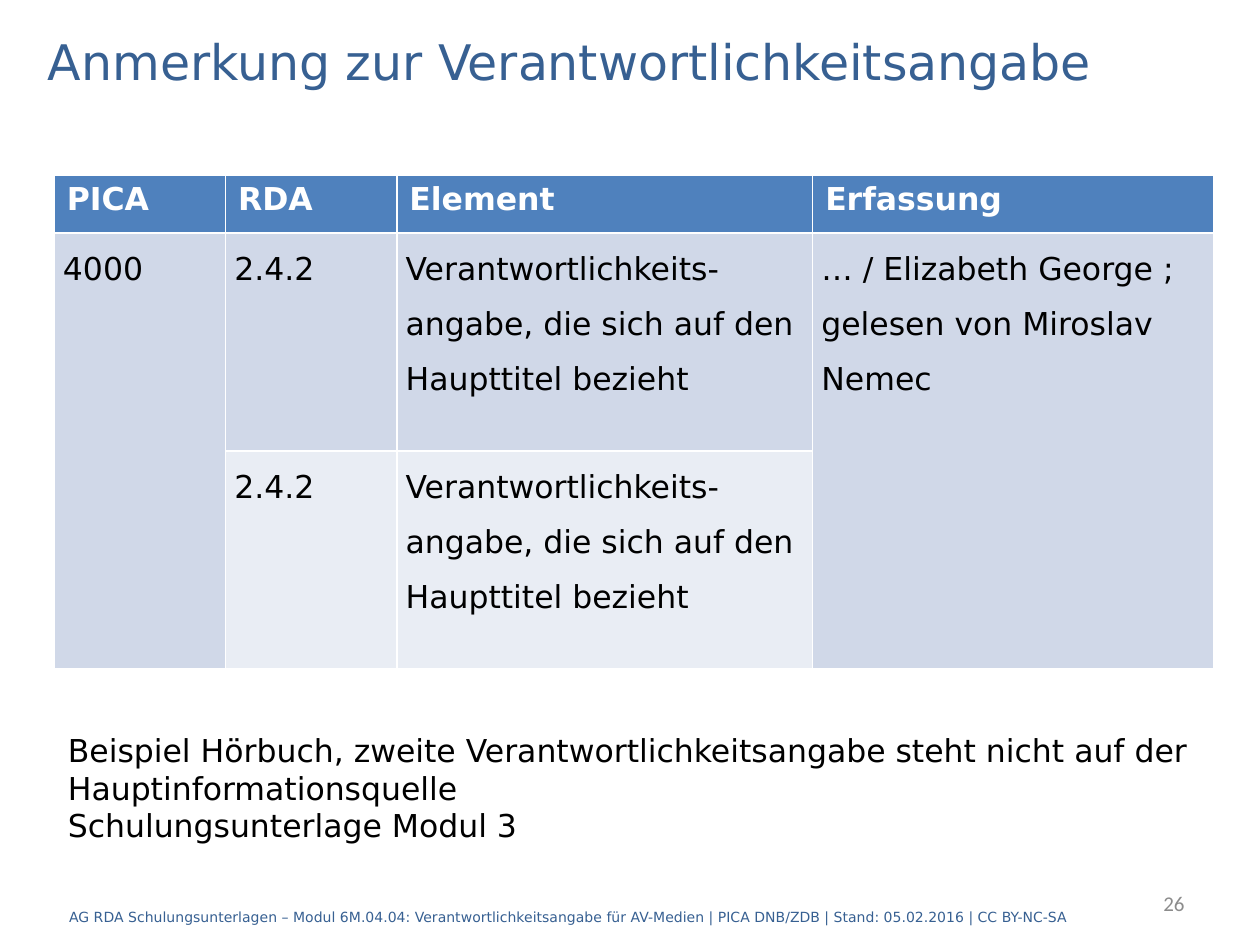
from dataclasses import dataclass

from pptx import Presentation
from pptx.dml.color import RGBColor as Color
from pptx.enum.text import MSO_ANCHOR as Anchor, PP_ALIGN as Align
from pptx.util import Inches, Pt


@dataclass(frozen=True)
class Theme:
    font: str = "DejaVu Sans"
    number_font: str = "Calibri"
    heading: str = "376092"
    text: str = "000000"
    muted: str = "8C8C8C"
    header_text: str = "FFFFFF"
    header_fill: str = "4F81BD"
    band_fills: tuple = ("D0D8E8", "E9EDF4")
    title_size: int = 28
    body_size: int = 18
    number_size: int = 12
    footer_size: int = 8


class SlideBuilder:
    COLUMNS, ROWS = 100, 75

    def __init__(self, presentation, theme):
        self.theme = theme
        self.column = presentation.slide_width / self.COLUMNS
        self.row = presentation.slide_height / self.ROWS
        self.slide = presentation.slides.add_slide(presentation.slide_layouts[5])

    def area(self, left, top, width, height):
        return (round(left * self.column), round(top * self.row),
                round(width * self.column), round(height * self.row))

    def fill_text(self, text_frame, text, size, color, font=None,
                  bold=False, align=Align.LEFT, spacing=None):
        text_frame.text = text
        text_frame.word_wrap = True
        for paragraph in text_frame.paragraphs:
            paragraph.alignment = align
            paragraph.line_spacing = spacing
            for run in paragraph.runs:
                run.font.name = font or self.theme.font
                run.font.size = Pt(size)
                run.font.bold = bold
                run.font.color.rgb = Color.from_string(color)

    def title(self, text, *area):
        shape = self.slide.shapes.title
        shape.left, shape.top, shape.width, shape.height = self.area(*area)
        shape.text_frame.vertical_anchor = Anchor.MIDDLE
        self.fill_text(shape.text_frame, text, self.theme.title_size, self.theme.heading)

    def text(self, text, *area, **style):
        shape = self.slide.shapes.add_textbox(*self.area(*area))
        shape.text_frame.vertical_anchor = Anchor.MIDDLE
        self.fill_text(shape.text_frame, text, **style)

    def cell(self, cell, text, fill, color, **style):
        cell.fill.solid()
        cell.fill.fore_color.rgb = Color.from_string(fill)
        self.fill_text(cell.text_frame, text, self.theme.body_size, color, **style)

    def table(self, rows, left, top, widths, heights, merged_columns):
        area = self.area(left, top, sum(widths), sum(heights))
        table = self.slide.shapes.add_table(len(rows), len(widths), *area).table
        for column, width in zip(table.columns, widths):
            column.width = round(width * self.column)
        for row, height in zip(table.rows, heights):
            row.height = round(height * self.row)
        for index in merged_columns:
            table.cell(1, index).merge(table.cell(len(rows) - 1, index))

        header, *body = rows
        for index, text in enumerate(header):
            self.cell(table.cell(0, index), text, self.theme.header_fill,
                      self.theme.header_text, bold=True)
        for number, texts in enumerate(body):
            for index, text in enumerate(texts):
                cell = table.cell(number + 1, index)
                if cell.is_spanned:
                    continue
                cell.margin_left = cell.margin_right = Inches(0.07)
                cell.margin_top = cell.margin_bottom = 0
                self.cell(cell, text, self.theme.band_fills[number % 2],
                          self.theme.text, spacing=1.5)


def main():
    presentation = Presentation()
    presentation.slide_width, presentation.slide_height = Inches(10), Inches(7.5)
    theme = Theme()
    builder = SlideBuilder(presentation, theme)

    element = "Verantwortlichkeits-angabe, die sich auf den Haupttitel bezieht"
    entry = "… / Elizabeth George ;\ngelesen von Miroslav Nemec"
    builder.table(
        [("PICA", "RDA", "Element", "Erfassung"),
         ("4000", "2.4.2", element, entry),
         ("", "2.4.2", element, "")],
        left=4.3, top=13.9, widths=(13.6, 13.6, 33, 31.8),
        heights=(4.6, 17.3, 17.3), merged_columns=(0, 3))

    builder.title("Anmerkung zur Verantwortlichkeitsangabe", 2.8, 2, 94.5, 5.6)
    builder.text("AG RDA Schulungsunterlagen – Modul 6M.04.04: "
                 "Verantwortlichkeitsangabe für AV-Medien | PICA DNB/ZDB | "
                 "Stand: 05.02.2016 | CC BY-NC-SA",
                 4.5, 70.6, 87.4, 4.4, size=theme.footer_size, color=theme.heading)
    builder.text("Beispiel Hörbuch, zweite Verantwortlichkeitsangabe steht nicht "
                 "auf der Hauptinformationsquelle\nSchulungsunterlage Modul 3",
                 4.4, 58, 94.5, 9, size=theme.body_size, color=theme.text)
    builder.text("26", 79.1, 69.7, 15.9, 4, size=theme.number_size,
                 color=theme.muted, font=theme.number_font, align=Align.RIGHT)

    presentation.save("out.pptx")


if __name__ == "__main__":
    main()
